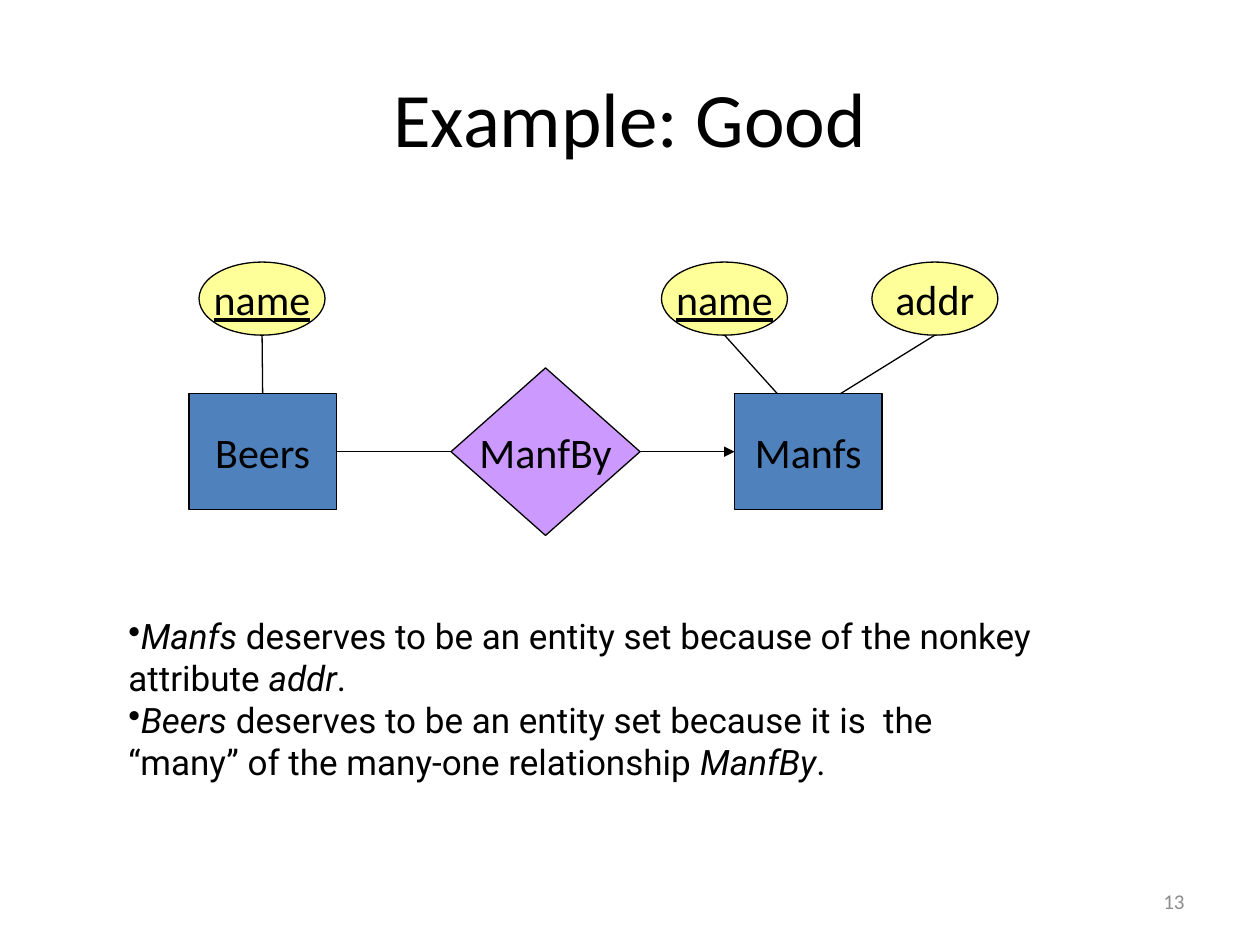
from lxml import etree
from pptx import Presentation
from pptx.dml.color import RGBColor
from pptx.enum import shapes, text
from pptx.oxml.ns import qn
from pptx.util import Inches, Pt

BLACK = RGBColor(0x00, 0x00, 0x00)
GRAY = RGBColor(0x8C, 0x8C, 0x8C)
BLUE = RGBColor(0x4F, 0x81, 0xBD)
PURPLE = RGBColor(0xCC, 0x99, 0xFF)
YELLOW = RGBColor(0xFF, 0xFF, 0x99)

SHAPE = shapes.MSO_SHAPE
ALIGN = text.PP_ALIGN
ANCHOR = text.MSO_ANCHOR


def write(shape, paragraphs, size=24, font="Calibri", color=BLACK, align=ALIGN.CENTER,
          anchor=ANCHOR.MIDDLE, wrap=True, underline=False, bullet=None):
    """Fill a shape with paragraphs, each a list of (words, italic) runs."""
    frame = shape.text_frame
    frame.word_wrap = wrap
    frame.vertical_anchor = anchor
    for index, runs in enumerate(paragraphs):
        paragraph = frame.paragraphs[0] if index == 0 else frame.add_paragraph()
        paragraph.alignment = align
        if bullet:
            etree.SubElement(paragraph._p.get_or_add_pPr(), qn("a:buChar")).set("char", bullet)
        for words, italic in runs:
            run = paragraph.add_run()
            run.text = words
            run.font.size = Pt(size)
            run.font.name = font
            run.font.color.rgb = color
            run.font.italic = italic
            run.font.underline = underline


def add_text(slide, box, paragraphs, **style):
    """Place a text box in the given box."""
    write(slide.shapes.add_textbox(*map(Inches, box)), paragraphs, **style)


def add_node(slide, preset, box, label, fill, underline=False):
    """Place one labelled, outlined diagram node."""
    node = slide.shapes.add_shape(preset, *map(Inches, box))
    node.shadow.inherit = False
    node.fill.solid()
    node.fill.fore_color.rgb = fill
    node.line.color.rgb = BLACK
    node.line.width = Pt(0.75)
    write(node, [[(label, False)]], wrap=False, underline=underline)
    return node


def add_link(slide, start=(0, 0), end=(0, 0), source=None, target=None, arrow=False):
    """Draw a line between points, or joined to (node, site) pairs."""
    link = slide.shapes.add_connector(
        shapes.MSO_CONNECTOR.STRAIGHT, *map(Inches, (*start, *end)))
    if source:
        link.begin_connect(*source)
    if target:
        link.end_connect(*target)
    link.line.color.rgb = BLACK
    link.line.width = Pt(0.75)
    if arrow:
        etree.SubElement(link.line._get_or_add_ln(), qn("a:tailEnd")).set("type", "triangle")
    etree.SubElement(link._element.spPr, qn("a:effectLst"))


def add_diagram(slide, box):
    """Draw the entity-relationship diagram inside the box."""
    left, top, width, height = box
    entity_w, entity_h = 1.17, 0.92
    oval_w, oval_h = 1, 0.58
    diamond_w, diamond_h = 1.5, 1.33
    middle = top + height - diamond_h / 2
    entity_top = middle - entity_h / 2
    manfs_left = left + 4.33

    beers, manfs = (
        add_node(slide, SHAPE.RECTANGLE, (x, entity_top, entity_w, entity_h), label, BLUE)
        for x, label in ((left, "Beers"), (manfs_left, "Manfs")))
    manf_by = add_node(slide, SHAPE.DIAMOND,
                       (left + 2.08, middle - diamond_h / 2, diamond_w, diamond_h),
                       "ManfBy", PURPLE)
    add_link(slide, source=(manf_by, 1), target=(beers, 3))
    add_link(slide, source=(manf_by, 3), target=(manfs, 1), arrow=True)

    attributes = (
        ("name", left + 0.58, None, (beers, 0)),
        ("name", left + 4.25, manfs_left + 0.34, None),
        ("addr", left + width - oval_w / 2, manfs_left + 0.84, None),
    )
    for label, center, foot, joint in attributes:
        add_node(slide, SHAPE.OVAL, (center - oval_w / 2, top, oval_w, oval_h),
                 label, YELLOW, underline=label == "name")
        add_link(slide, (center, top + oval_h), (foot or center, entity_top), target=joint)


def add_notes(slide, box):
    """Write the two bulleted reasons inside the box."""
    reasons = [
        [("Manfs", True),
         (" deserves to be an entity set because of the nonkey attribute ", False),
         ("addr", True), (".", False)],
        [("Beers", True),
         (" deserves to be an entity set because it is  the “many” of the "
          "many-one relationship ", False),
         ("ManfBy", True), (".", False)],
    ]
    add_text(slide, box, reasons, size=20, font="Roboto", align=ALIGN.LEFT,
             anchor=ANCHOR.TOP, bullet="•")


def main():
    """Build and save the slide."""
    deck = Presentation()
    deck.slide_width, deck.slide_height = Inches(10), Inches(7.5)
    slide = deck.slides.add_slide(deck.slide_layouts[6])
    add_text(slide, (0.5, 0.3, 9, 1.25), [[("Example: Good", False)]], size=44)
    add_diagram(slide, (1.5, 2.08, 6.42, 2.17))
    add_notes(slide, (0.92, 4.83, 7.52, 1.45))
    add_text(slide, (7.17, 6.95, 2.33, 0.4), [[("13", False)]], size=12, color=GRAY,
             align=ALIGN.RIGHT)
    deck.save("out.pptx")


if __name__ == "__main__":
    main()
